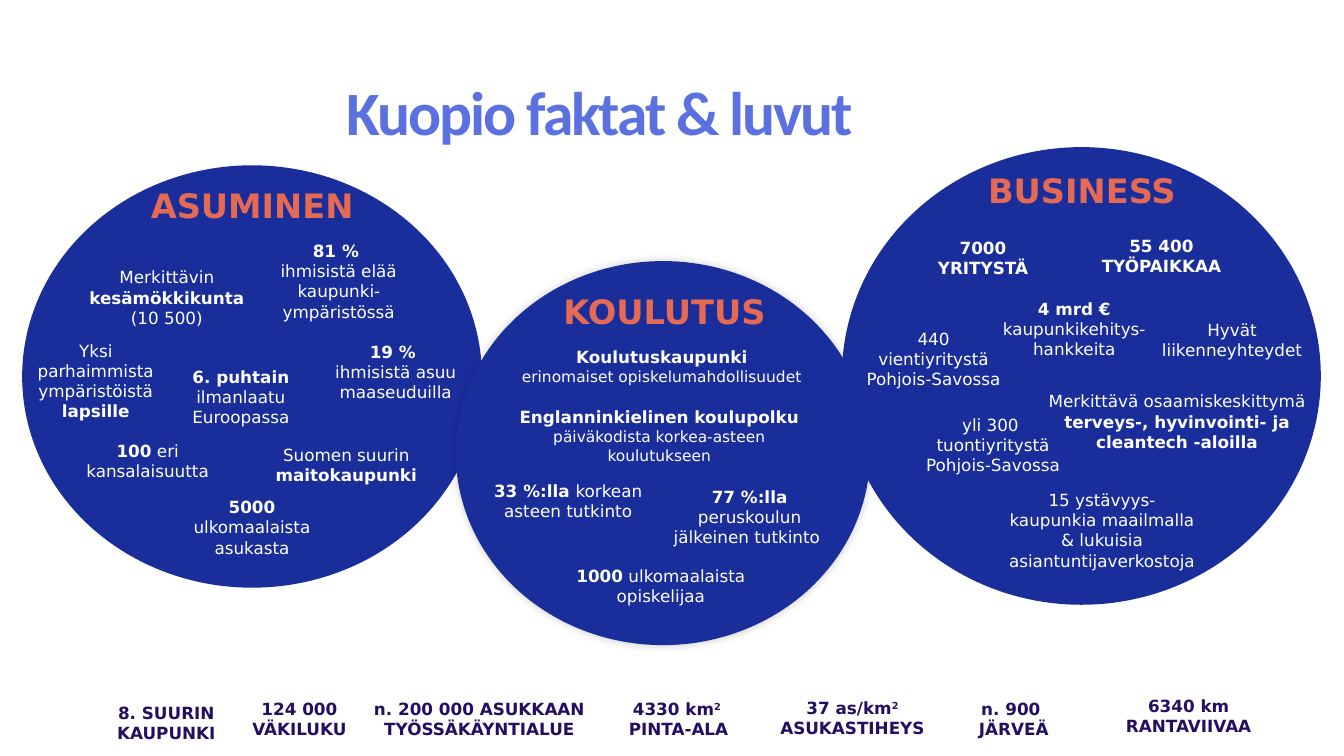
import pptx
import pptx.dml.color
import pptx.enum.shapes
import pptx.enum.text
import pptx.oxml
import pptx.oxml.ns
import pptx.util

RGBColor = pptx.dml.color.RGBColor
BLUE = RGBColor(0x19, 0x2D, 0x9B)
LIGHT_BLUE = RGBColor(0x5A, 0x71, 0xDF)
CORAL = RGBColor(0xE5, 0x6A, 0x54)
VIOLET = RGBColor(0x25, 0x0E, 0x62)
WHITE = RGBColor(0xFF, 0xFF, 0xFF)

EMU_PER_PX = 9144  # 100 px to the inch
SHADOW_XML = (
    '<a:effectLst %s><a:outerShdw blurRad="76200" dist="0" dir="18900000">'
    '<a:srgbClr val="000000"><a:alpha val="20000"/></a:srgbClr>'
    '</a:outerShdw></a:effectLst>' % pptx.oxml.ns.nsdecls("a"))


def px(length):
    return pptx.util.Emu(length * EMU_PER_PX)


class FactSlide:
    """Draws the elements; in text, *stars* mark bold and ^ starts a superscript."""
    font = "DejaVu Sans"
    size = 12

    def __init__(self, slide):
        self.slide = slide
        self.shapes = slide.shapes

    def start_group(self):
        self.shapes = self.slide.shapes.add_group_shape().shapes

    def end_group(self):
        self.shapes = self.slide.shapes

    def circle(self, left, top, width, height, shadow=False):
        shape = self.shapes.add_shape(
            pptx.enum.shapes.MSO_SHAPE.OVAL, px(left), px(top), px(width), px(height))
        shape.shadow.inherit = False
        shape.fill.solid()
        shape.fill.fore_color.rgb = BLUE
        shape.line.fill.background()
        if shadow:
            properties = shape._element.spPr
            properties.remove(properties.find(pptx.oxml.ns.qn("a:effectLst")))
            properties.append(pptx.oxml.parse_xml(SHADOW_XML))

    def box(self, left, top, width, height, inset):
        shape = self.shapes.add_textbox(px(left), px(top), px(width), px(height))
        frame = shape.text_frame
        frame.word_wrap = True
        frame.margin_left = frame.margin_right = px(inset)
        frame.margin_top = frame.margin_bottom = px(inset // 2)
        return frame

    def style(self, run, size, color, bold, font=None):
        run.font.name = font or self.font
        run.font.size = pptx.util.Pt(size)
        run.font.color.rgb = color
        run.font.bold = bold

    def text(self, left, top, width, height, text, color=WHITE, size=size,
             plain_size=None, inset=6):
        frame = self.box(left, top, width, height, inset)
        frame.auto_size = pptx.enum.text.MSO_AUTO_SIZE.SHAPE_TO_FIT_TEXT
        for number, line in enumerate(text.split("\n")):
            paragraph = frame.add_paragraph() if number else frame.paragraphs[0]
            paragraph.alignment = pptx.enum.text.PP_ALIGN.CENTER
            for index, part in enumerate(line.split("*")):
                bold = index % 2 == 1
                run_size = size if bold else plain_size or size
                for level, words in enumerate(part.split("^")):
                    if not words:
                        continue
                    run = paragraph.add_run()
                    run.text = words
                    self.style(run, run_size, color, bold)
                    if level:
                        run.font._element.set("baseline", "30000")

    def heading(self, left, top, text):
        self.text(left, top, 252, 47, f"*{text}*", CORAL, 24)

    def title(self, left, top, width, height, text):
        frame = self.box(left, top, width, height, 0)
        frame.vertical_anchor = pptx.enum.text.MSO_ANCHOR.MIDDLE
        frame.text = text
        paragraph = frame.paragraphs[0]
        paragraph.line_spacing = 0.9
        run = paragraph.runs[0]
        self.style(run, 44, LIGHT_BLUE, True, "Calibri")
        run.font._element.set("spc", "-150")


KEY_FIGURES = [
    (96, 694, 138, "*8. SUURIN*\n*KAUPUNKI*"),
    (228, 690, 138, "*124 000*\n*VÄKILUKU*"),
    (361, 690, 229, "*n. 200 000 ASUKKAAN*\n*TYÖSSÄKÄYNTIALUE*"),
    (599, 690, 148, "*4330 km^2 *\n*PINTA-ALA*"),
    (760, 689, 171, "*37 as/km^2*\n*ASUKASTIHEYS*"),
    (918, 690, 175, "*n. 900 *\n*JÄRVEÄ*"),
    (1101, 687, 156, "*6340 km*\n*RANTAVIIVAA*"),
]
HOUSING_FACTS = [
    (63, 434, 167, 47, "*100* eri kansalaisuutta"),
    (325, 336, 135, 67, "*19 % *\nihmisistä asuu maaseuduilla"),
    (81, 262, 169, 67, "Merkittävin\n*kesämökkikunta*\n(10 500)"),
    (161, 361, 156, 67, "*6. puhtain*\nilmanlaatu\nEuroopassa"),
    (15, 335, 160, 87, "Yksi parhaimmista ympäristöistä *lapsille*"),
    (182, 490, 136, 67, "*5000*\nulkomaalaista asukasta"),
    (265, 236, 142, 87, "*81 % *\nihmisistä elää kaupunki-ympäristössä"),
]
BUSINESS_FACTS = [
    (892, 233, 166, 47, "*7000*\n*YRITYSTÄ*"),
    (1064, 231, 176, 47, "*55 400*\n*TYÖPAIKKAA*"),
    (987, 483, 212, 87,
     "15 ystävyys-\nkaupunkia maailmalla\n& lukuisia asiantuntijaverkostoja"),
    (891, 408, 188, 87, "yli 300 \ntuontiyritystä\nPohjois-Savossa"),
    (846, 323, 160, 67, "440\nvientiyritystä\nPohjois-Savossa"),
    (1033, 385, 269, 67,
     "Merkittävä osaamiskeskittymä *terveys-, hyvinvointi- ja cleantech -aloilla*"),
    (988, 293, 155, 67, "*4 mrd €*\nkaupunkikehitys-hankkeita"),
    (1142, 314, 160, 47, "Hyvät liikenneyhteydet"),
]


def main():
    presentation = pptx.Presentation()
    presentation.slide_width, presentation.slide_height = px(1333), px(750)
    page = FactSlide(presentation.slides.add_slide(presentation.slide_layouts[6]))

    # Key figures along the bottom
    for left, top, width, text in KEY_FIGURES:
        page.text(left, top, width, 47, text, VIOLET)

    # Housing
    page.start_group()
    page.circle(22, 164, 456, 419)
    for fact in HOUSING_FACTS:
        page.text(*fact)
    page.heading(124, 180, "ASUMINEN")
    page.end_group()
    page.text(246, 436, 195, 50, "Suomen suurin *maitokaupunki*", inset=10)

    # Education
    page.circle(452, 259, 411, 381, shadow=True)
    page.heading(533, 286, "KOULUTUS")
    page.text(510, 341, 293, 45,
              "*Koulutuskaupunki*\nerinomaiset opiskelumahdollisuudet", plain_size=11)
    page.text(496, 401, 316, 63,
              "*Englanninkielinen koulupolku *päiväkodista korkea-asteen koulutukseen",
              plain_size=11)
    page.text(658, 480, 171, 67, "*77 %:lla *peruskoulun jälkeinen tutkinto ")
    page.text(558, 556, 195, 50, "*1000* ulkomaalaista opiskelijaa", inset=10)

    # Business
    page.start_group()
    page.circle(835, 146, 475, 454)
    for fact in BUSINESS_FACTS:
        page.text(*fact)
    page.heading(947, 166, "BUSINESS")
    page.end_group()

    # Education fact beside the housing circle, and the title
    page.text(479, 472, 169, 71, "*33 %:lla *korkean asteen tutkinto", inset=10)
    page.title(344, 63, 781, 103, "Kuopio faktat & luvut")

    presentation.save("out.pptx")


if __name__ == "__main__":
    main()
